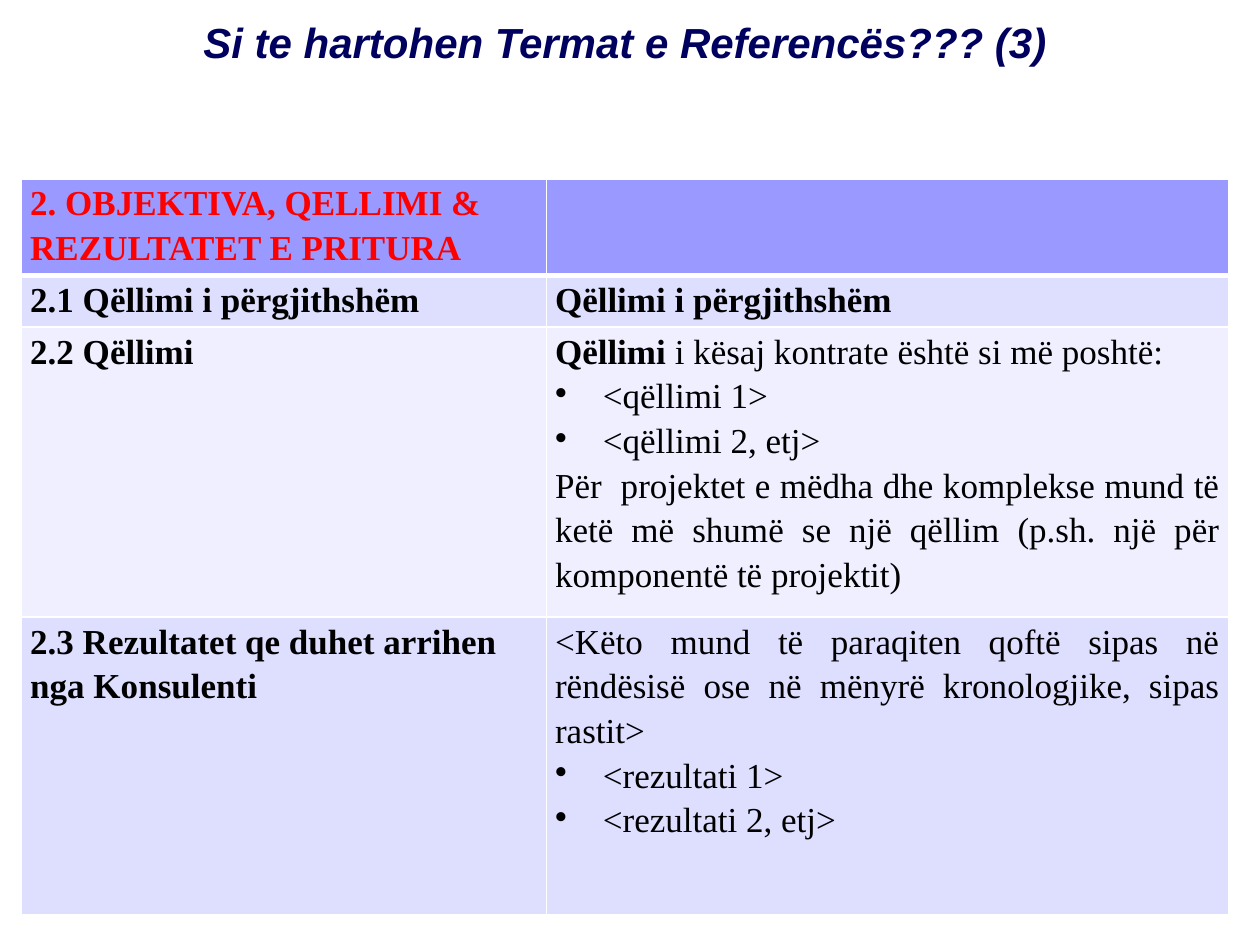
from pptx import Presentation
from pptx.util import Inches, Pt
from pptx.dml.color import RGBColor
from pptx.enum.text import PP_ALIGN
from lxml.etree import SubElement
from pptx.oxml.ns import qn

WIDE, HIGH = Inches(10), Inches(7.5)
HUES = {"title": "00005E", "head": "9999FF", "dark": "DEDEFF",
        "light": "EFEFFF", "red": "FF0000", "ink": "000000", "rule": "FFFFFF"}
PAD, DENT = Inches(0.07), Inches(0.38)
LEFT, BOTH = PP_ALIGN.LEFT, PP_ALIGN.JUSTIFY

# Table text: a cell is a list of (align, bullet, runs); a run is (text, bold)
COLS = [4.17, 5.42]
ROWS = [
    (0.7, "head", "red",
     [(LEFT, False, [("2. OBJEKTIVA, QELLIMI & REZULTATET E PRITURA", True)])],
     []),
    (0.41, "dark", "ink",
     [(LEFT, False, [("2.1 Qëllimi i përgjithshëm", True)])],
     [(LEFT, False, [("Qëllimi i përgjithshëm", True)])]),
    (2.13, "light", "ink",
     [(LEFT, False, [("2.2 Qëllimi", True)])],
     [(BOTH, False, [("Qëllimi ", True),
                     ("i kësaj kontrate është si më poshtë:", False)]),
      (BOTH, True, [("<qëllimi 1>", False)]),
      (BOTH, True, [("<qëllimi 2, etj>", False)]),
      (BOTH, False, [("Për  projektet e mëdha dhe komplekse mund të ketë më "
                      "shumë se një qëllim (p.sh. një për komponentë të "
                      "projektit)", False)])]),
    (2.36, "dark", "ink",
     [(LEFT, False, [("2.3 Rezultatet qe duhet arrihen nga Konsulenti", True)])],
     [(BOTH, False, [("<Këto mund të paraqiten qoftë sipas në rëndësisë ose në "
                      "mënyrë kronologjike, sipas rastit>", False)]),
      (BOTH, True, [("<rezultati 1>", False)]),
      (BOTH, True, [("<rezultati 2, etj>", False)])]),
]


def add_run(para, text, face, size, hue, bold, slant=False):
    run = para.add_run()
    run.text = text
    font = run.font
    font.name, font.size, font.bold, font.italic = face, Pt(size), bold, slant
    font.color.rgb = RGBColor.from_string(HUES[hue])


def add_title(slide, box):
    frame = slide.shapes.add_textbox(*box).text_frame
    frame.word_wrap = True
    para = frame.paragraphs[0]
    para.alignment = PP_ALIGN.CENTER
    add_run(para, "Si te hartohen Termat e Referencës??? (3)",
            "Arial", 24, "title", True, True)


def add_rules(cell, top, base):
    props = cell._tc.get_or_add_tcPr()
    for side, size in zip("LRTB", (1, 1, top, base)):
        line = SubElement(props, qn("a:ln" + side), w=str(Pt(size)))
        fill = SubElement(line, qn("a:solidFill"))
        SubElement(fill, qn("a:srgbClr"), val=HUES["rule"])


def fill_cell(cell, paras, hue):
    cell.margin_left = cell.margin_right = PAD
    cell.margin_top = cell.margin_bottom = 0
    frame = cell.text_frame
    for num, (align, dot, runs) in enumerate(paras):
        para = frame.add_paragraph() if num else frame.paragraphs[0]
        if dot:
            props = para._p.get_or_add_pPr()
            props.set("marL", str(DENT))
            props.set("indent", str(-DENT))
            SubElement(props, qn("a:buChar"), char="•")
        para.alignment, para.line_spacing = align, 1.15
        for text, bold in runs:
            add_run(para, text, "Times New Roman", 20, hue, bold)


def add_grid(slide, box):
    left, top, width, height = box
    table = slide.shapes.add_table(len(ROWS), len(COLS), *box).table
    total = sum(row[0] for row in ROWS)
    for col, share in zip(table.columns, COLS):
        col.width = int(width * share / sum(COLS))
    for num, (share, back, hue, *cells) in enumerate(ROWS):
        table.rows[num].height = int(height * share / total)
        for col, paras in enumerate(cells):
            cell = table.cell(num, col)
            # A thick rule sits under the heading row
            add_rules(cell, 3 if num == 1 else 1, 3 if num == 0 else 1)
            cell.fill.solid()
            cell.fill.fore_color.rgb = RGBColor.from_string(HUES[back])
            fill_cell(cell, paras, hue)


def share_box(left, top, width, height):
    return (int(WIDE * left / 100), int(HIGH * top / 100),
            int(WIDE * width / 100), int(HIGH * height / 100))


def main():
    deck = Presentation()
    deck.slide_width, deck.slide_height = WIDE, HIGH
    slide = deck.slides.add_slide(deck.slide_layouts[6])
    add_title(slide, share_box(0, 1.07, 99.2, 13.33))
    add_grid(slide, share_box(1.7, 18.93, 95.8, 74.67))
    deck.save("out.pptx")


if __name__ == "__main__":
    main()
